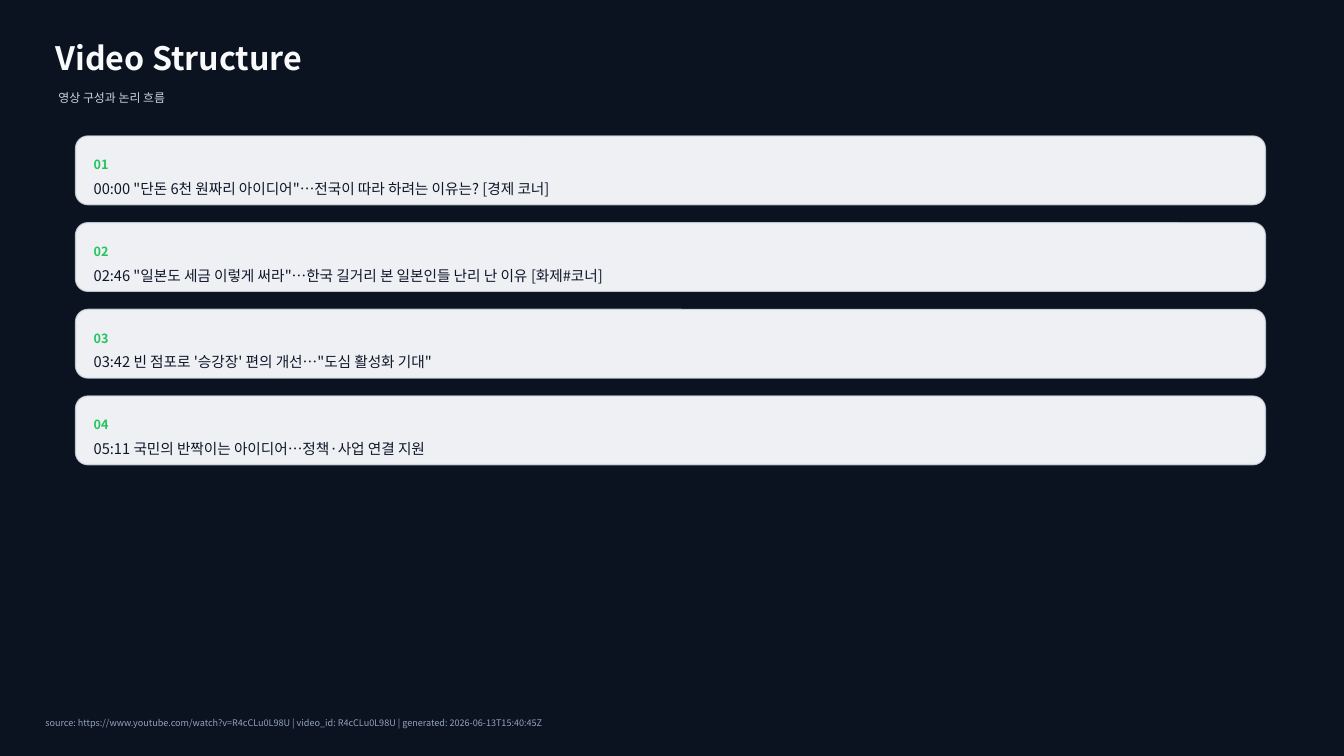
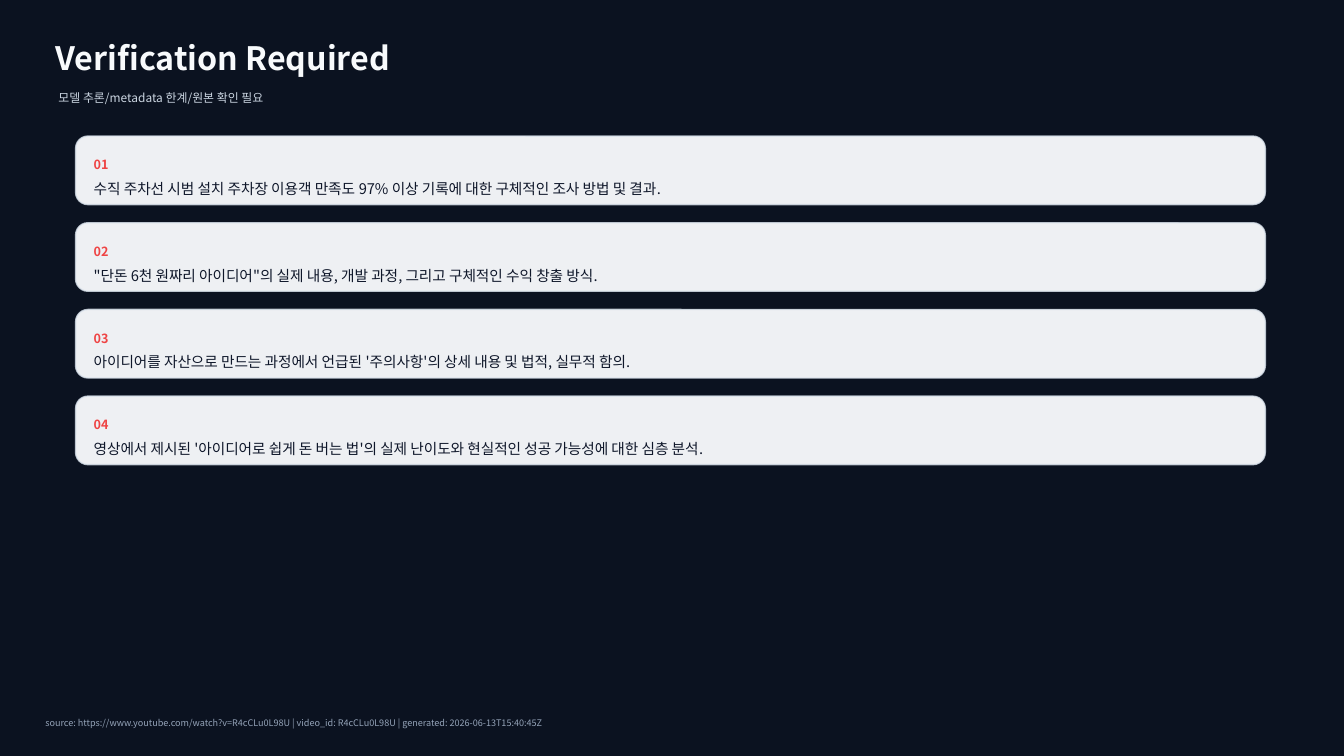
from lxml import etree
from pptx import Presentation
from pptx.dml.color import RGBColor
from pptx.enum.shapes import MSO_SHAPE
from pptx.enum.text import MSO_ANCHOR
from pptx.oxml.ns import qn
from pptx.util import Pt

PX = 9144
FONT = "Noto Sans CJK KR"
ROUNDED = MSO_SHAPE.ROUNDED_RECTANGLE
MIDDLE = MSO_ANCHOR.MIDDLE

NIGHT = RGBColor(0x0B, 0x12, 0x20)
WHITE = RGBColor(0xF8, 0xFA, 0xFC)
SILVER = RGBColor(0xCB, 0xD5, 0xE1)
BORDER = RGBColor(0xD7, 0xE0, 0xEA)
INK = RGBColor(0x0F, 0x17, 0x2A)
SLATE = RGBColor(0x94, 0xA3, 0xB8)
GREEN = RGBColor(0x22, 0xC5, 0x5E)
RED = RGBColor(0xEF, 0x44, 0x44)

CARD_LEFT, CARD_TOP, CARD_WIDTH, CARD_HEIGHT = 75, 135, 1180, 68
CARD_GAP = 18
CARD_PAD = 18
TEXT_LEFT = CARD_LEFT + CARD_PAD
TEXT_WIDTH = CARD_WIDTH - 2 * CARD_PAD

SOURCE = (
    "source: https://www.youtube.com/watch?v=R4cCLu0L98U"
    " | video_id: R4cCLu0L98U | generated: 2026-06-13T15:40:45Z"
)

SLIDES = [
    ("Video Structure", "영상 구성과 논리 흐름", GREEN, [
        "00:00 \"단돈 6천 원짜리 아이디어\"…전국이 따라 하려는 이유는? [경제 코너]",
        "02:46 \"일본도 세금 이렇게 써라\"…한국 길거리 본 일본인들 난리 난 이유 [화제#코너]",
        "03:42 빈 점포로 '승강장' 편의 개선…\"도심 활성화 기대\"",
        "05:11 국민의 반짝이는 아이디어…정책·사업 연결 지원",
    ]),
    ("Verification Required", "모델 추론/metadata 한계/원본 확인 필요", RED, [
        "수직 주차선 시범 설치 주차장 이용객 만족도 97% 이상 기록에 대한 구체적인 조사 방법 및 결과.",
        "\"단돈 6천 원짜리 아이디어\"의 실제 내용, 개발 과정, 그리고 구체적인 수익 창출 방식.",
        "아이디어를 자산으로 만드는 과정에서 언급된 '주의사항'의 상세 내용 및 법적, 실무적 함의.",
        "영상에서 제시된 '아이디어로 쉽게 돈 버는 법'의 실제 난이도와 현실적인 성공 가능성에 대한 심층 분석.",
    ]),
]


def add_text(slide, text, left, top, width, height, size, color, bold=False):
    box = slide.shapes.add_textbox(left * PX, top * PX, width * PX, height * PX)
    frame = box.text_frame
    frame.word_wrap = True
    frame.vertical_anchor = MIDDLE
    frame.margin_left = frame.margin_right = 0
    frame.margin_top = frame.margin_bottom = 0
    run = frame.paragraphs[0].add_run()
    run.text = text
    run.font.size = Pt(size)
    run.font.bold = bold
    run.font.color.rgb = color
    run.font.name = FONT
    east_asian = etree.SubElement(run.font._element, qn("a:ea"))
    east_asian.set("typeface", FONT)


def set_opacity(fill, percent):
    color = fill._xPr.find(qn("a:solidFill"))[0]
    etree.SubElement(color, qn("a:alpha")).set("val", str(percent * 1000))


deck = Presentation()
deck.slide_width = 1333 * PX
deck.slide_height = 750 * PX
blank = deck.slide_layouts[6]

for title, subtitle, accent, entries in SLIDES:
    slide = deck.slides.add_slide(blank)
    slide.background.fill.solid()
    slide.background.fill.fore_color.rgb = NIGHT

    add_text(slide, title, 55, 35, 1200, 45, 23, WHITE, bold=True)
    add_text(slide, subtitle, 58, 83, 1150, 28, 8.5, SILVER)

    for index, entry in enumerate(entries):
        top = CARD_TOP + index * (CARD_HEIGHT + CARD_GAP)
        card = slide.shapes.add_shape(
            ROUNDED, CARD_LEFT * PX, top * PX, CARD_WIDTH * PX, CARD_HEIGHT * PX
        )
        card.adjustments[0] = 0.18
        card.shadow.inherit = False
        card.fill.solid()
        card.fill.fore_color.rgb = WHITE
        set_opacity(card.fill, 96)
        card.line.width = Pt(1)
        card.line.color.rgb = BORDER
        set_opacity(card.line.fill, 80)

        add_text(slide, f"{index + 1:02}", TEXT_LEFT, top + 16, TEXT_WIDTH, 25, 9, accent, bold=True)
        add_text(slide, entry, TEXT_LEFT, top + 50, TEXT_WIDTH, 4, 10.5, INK)

    add_text(slide, SOURCE, 45, 705, 1240, 25, 6.5, SLATE)

deck.save("out.pptx")
